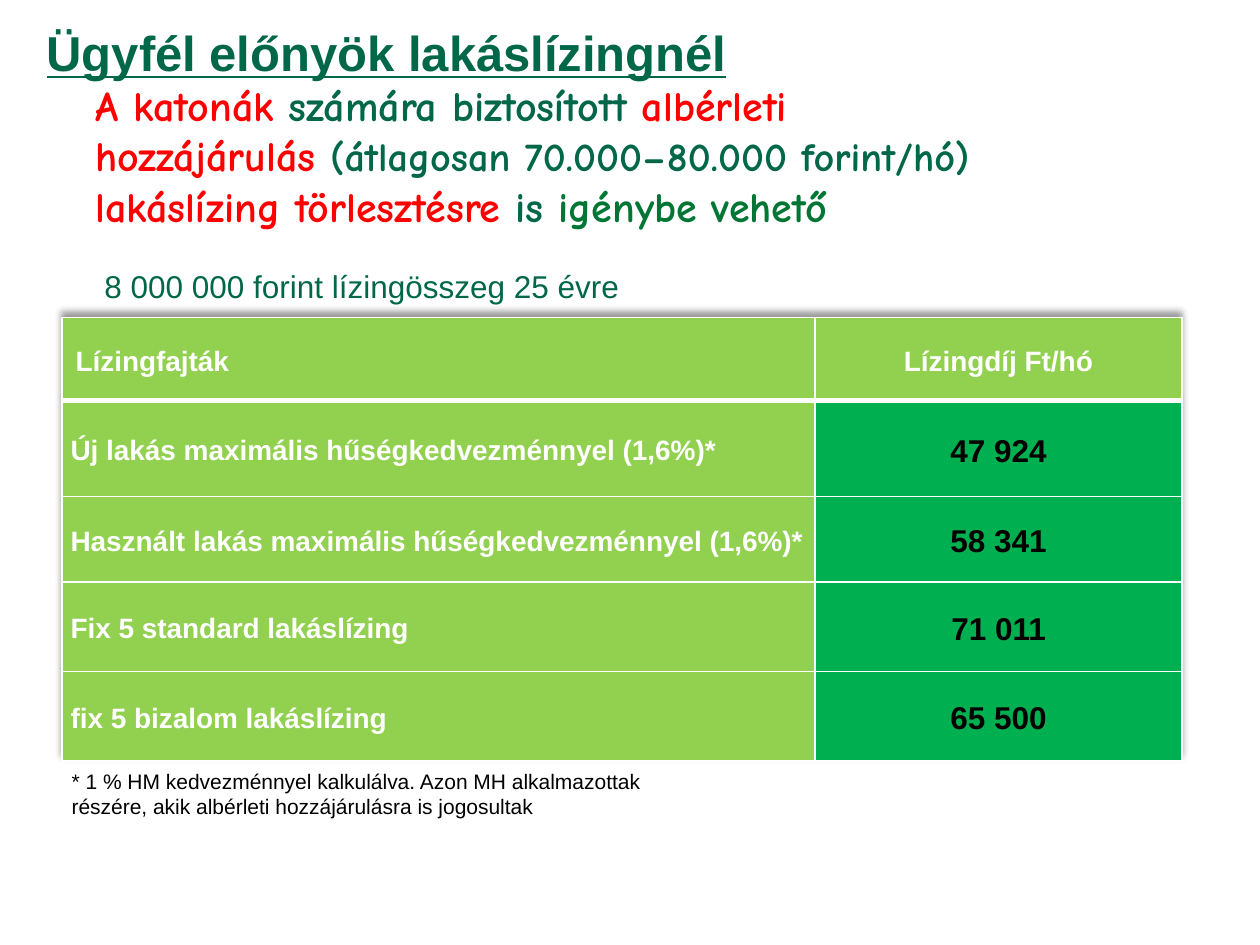
from lxml import etree
from pptx import Presentation
from pptx.dml.color import RGBColor
from pptx.enum.text import MSO_ANCHOR, PP_ALIGN
from pptx.oxml.ns import qn
from pptx.util import Inches, Pt

LEFT, CENTER = PP_ALIGN.LEFT, PP_ALIGN.CENTER
TOP, MIDDLE = MSO_ANCHOR.TOP, MSO_ANCHOR.MIDDLE
TITLE_ONLY = 5

DARK_GREEN = RGBColor(0x00, 0x67, 0x49)
MID_GREEN = RGBColor(0x00, 0x76, 0x35)
LIME = RGBColor(0x92, 0xD0, 0x50)
GREEN = RGBColor(0x00, 0xB0, 0x50)
RED = RGBColor(0xFF, 0x00, 0x00)
WHITE = RGBColor(0xFF, 0xFF, 0xFF)
BLACK = RGBColor(0x00, 0x00, 0x00)

HEADER = ("Lízingfajták", "Lízingdíj Ft/hó")
LEASES = [
    ("Új lakás maximális hűségkedvezménnyel (1,6%)*", "47 924"),
    ("Használt lakás maximális hűségkedvezménnyel (1,6%)*", "58 341"),
    ("Fix 5 standard lakáslízing", "71 011"),
    ("fix 5 bizalom lakáslízing", "65 500"),
]
COLUMN_WIDTHS = (5.98, 2.91)
ROW_HEIGHTS = (0.66, 0.76, 0.68, 0.71, 0.71)

# A vertical tab is a line break inside the paragraph.
BENEFIT = [
    ("A katonák ", 24, RED),
    ("számára biztosított ", 24, DARK_GREEN),
    ("albérleti\vhozzájárulás ", 24, RED),
    ("(átlagosan 70.000–80.000 forint/hó) ", 23, DARK_GREEN),
    ("lakáslízing törlesztésre ", 24, RED),
    ("is ", 24, DARK_GREEN),
    ("igénybe vehető", 24, MID_GREEN),
]


def add_text(paragraph, text, size, color, font="Arial", bold=False, underline=False):
    for index, line in enumerate(text.split("\v")):
        if index:
            paragraph.add_line_break()
        run = paragraph.add_run()
        run.text = line
        run.font.name = font
        run.font.size = Pt(size)
        run.font.bold = bold
        run.font.underline = underline
        run.font.color.rgb = color


def add_box(slide, left, top, width, height):
    frame = slide.shapes.add_textbox(
        Inches(left), Inches(top), Inches(width), Inches(height)).text_frame
    frame.word_wrap = True
    return frame


def set_indent(paragraph, inches):
    properties = paragraph._p.get_or_add_pPr()
    properties.set("marL", str(Inches(inches)))
    properties.set("indent", "0")


def add_title(slide):
    title = slide.shapes.title
    title.left, title.top = Inches(0.27), Inches(0.13)
    title.width, title.height = Inches(8.59), Inches(0.5)
    frame = title.text_frame
    frame.vertical_anchor = TOP
    frame.margin_bottom = 0
    paragraph = frame.paragraphs[0]
    paragraph.alignment = LEFT
    paragraph.line_spacing = 1.0
    add_text(paragraph, "Ügyfél előnyök lakáslízingnél", 28, DARK_GREEN,
             bold=True, underline=True)


def add_benefit(slide):
    frame = add_box(slide, 0.27, 0.63, 8.59, 1.89)
    frame.margin_top = 0
    benefit = frame.paragraphs[0]
    set_indent(benefit, 0.39)
    for text, size, color in BENEFIT:
        add_text(benefit, text, size, color, font="Comic Neue", bold=True)

    caption = frame.add_paragraph()
    set_indent(caption, 0.46)
    caption.space_before = Pt(21)
    add_text(caption, "8 000 000 forint lízingösszeg 25 évre", 18, DARK_GREEN)


def set_borders(cell, top, bottom):
    """Draw white cell borders; top and bottom widths are in points."""
    properties = cell._tc.get_or_add_tcPr()
    for tag, width in (("a:lnL", 1), ("a:lnR", 1), ("a:lnT", top), ("a:lnB", bottom)):
        line = etree.SubElement(properties, qn(tag), w=str(Pt(width)))
        fill = etree.SubElement(line, qn("a:solidFill"))
        etree.SubElement(fill, qn("a:srgbClr"), val=str(WHITE))


def add_table_shadow(table):
    effects = etree.Element(qn("a:effectLst"))
    shadow = etree.SubElement(effects, qn("a:outerShdw"), blurRad=str(Pt(4)),
                              dist=str(Pt(3)), dir="16200000", rotWithShape="0")
    color = etree.SubElement(shadow, qn("a:prstClr"), val="black")
    etree.SubElement(color, qn("a:alpha"), val="40000")
    table._tbl.tblPr.insert(0, effects)


def fill_cell(cell, text, size, color, background, alignment):
    cell.fill.solid()
    cell.fill.fore_color.rgb = background
    cell.vertical_anchor = MIDDLE
    cell.margin_left = cell.margin_right = Inches(0.07)
    cell.margin_top = cell.margin_bottom = 0
    paragraph = cell.text_frame.paragraphs[0]
    paragraph.alignment = alignment
    paragraph.line_spacing = 1.15
    add_text(paragraph, text, size, color, bold=True)


def add_lease_table(slide):
    table = slide.shapes.add_table(
        len(ROW_HEIGHTS), len(COLUMN_WIDTHS), Inches(0.49), Inches(2.52),
        Inches(sum(COLUMN_WIDTHS)), Inches(sum(ROW_HEIGHTS))).table
    for column, width in zip(table.columns, COLUMN_WIDTHS):
        column.width = Inches(width)
    for row, height in zip(table.rows, ROW_HEIGHTS):
        row.height = Inches(height)

    for r, (lease, fee) in enumerate([HEADER] + LEASES):
        lease_cell, fee_cell = table.cell(r, 0), table.cell(r, 1)
        for cell in (lease_cell, fee_cell):
            set_borders(cell, top=3 if r == 1 else 1, bottom=3 if r == 0 else 1)
        fill_cell(lease_cell, lease, 16, WHITE, LIME, LEFT)
        if r == 0:
            fill_cell(fee_cell, fee, 16, WHITE, LIME, CENTER)
        else:
            fill_cell(fee_cell, fee, 18, BLACK, GREEN, CENTER)
    table.cell(0, 0).margin_left = Inches(0.11)
    add_table_shadow(table)


def add_footnote(slide):
    frame = add_box(slide, 0.47, 6.05, 5, 0.51)
    add_text(frame.paragraphs[0],
             "* 1 % HM kedvezménnyel kalkulálva. Azon MH alkalmazottak részére, "
             "akik albérleti hozzájárulásra is jogosultak", 12, BLACK)


def main():
    presentation = Presentation()
    presentation.slide_width, presentation.slide_height = Inches(10), Inches(7.5)
    slide = presentation.slides.add_slide(presentation.slide_layouts[TITLE_ONLY])
    add_title(slide)
    add_benefit(slide)
    add_lease_table(slide)
    add_footnote(slide)
    presentation.save("out.pptx")


if __name__ == "__main__":
    main()
